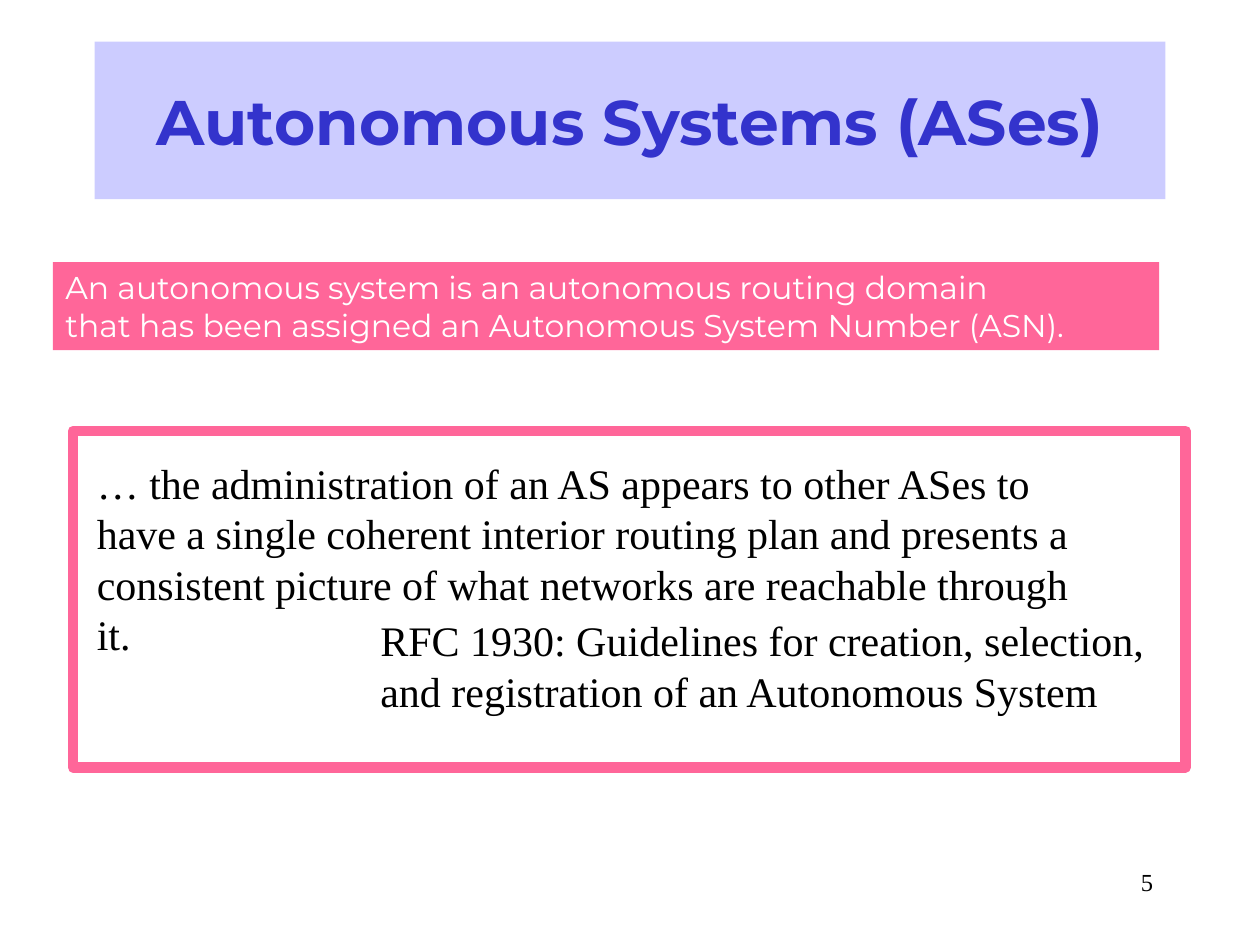
from pptx import Presentation
from pptx import util as u
from pptx.dml.color import RGBColor
from pptx.enum import shapes, text

COLORS = {
    "title_fill": "CCCCFF",
    "title_text": "3333CC",
    "accent": "FF6699",
    "white": "FFFFFF",
    "black": "000000",
}
SANS, SERIF = "Montserrat", "Times New Roman"


def color(name):
    """Return the named colour."""
    return RGBColor.from_string(COLORS[name])


def place(shape, box):
    """Move a shape to a left, top, width, height box in inches."""
    shape.left, shape.top, shape.width, shape.height = map(u.Inches, box)


def fill(shape, name):
    """Give a shape a solid fill."""
    shape.fill.solid()
    shape.fill.fore_color.rgb = color(name)


def write(shape, lines, font=SERIF, size=24, ink="black", bold=False,
          align=text.PP_ALIGN.LEFT, anchor=text.MSO_ANCHOR.TOP, spacing=None):
    """Write one paragraph per line into a shape."""
    frame = shape.text_frame
    frame.word_wrap = True
    frame.auto_size = text.MSO_AUTO_SIZE.NONE
    frame.vertical_anchor = anchor
    frame.text = "\n".join(lines)
    for paragraph in frame.paragraphs:
        paragraph.alignment = align
        if spacing:
            paragraph.line_spacing = u.Pt(spacing)
        style = paragraph.runs[0].font
        style.name, style.size, style.bold = font, u.Pt(size), bold
        style.color.rgb = color(ink)


def add_text(parent, box, lines, **style):
    """Add a text box to a shape collection."""
    shape = parent.add_textbox(*map(u.Inches, box))
    write(shape, lines, **style)
    return shape


def add_title(slide, box):
    """Format the title placeholder as a filled banner."""
    title = slide.shapes.title
    place(title, box)
    fill(title, "title_fill")
    write(title, ["Autonomous Systems (ASes)"], font=SANS, size=36,
          ink="title_text", bold=True, align=text.PP_ALIGN.CENTER,
          anchor=text.MSO_ANCHOR.MIDDLE)


def add_definition(slide, box):
    """Add the definition on its accent band."""
    band = add_text(slide.shapes, box, [
        "An autonomous system is an autonomous routing domain",
        "that has been assigned an Autonomous System Number (ASN).",
    ], font=SANS, size=18, ink="white")
    fill(band, "accent")


def add_quote(slide, box):
    """Add the framed quotation and its source as a group."""
    left, top, width, height = box
    group = slide.shapes.add_group_shape().shapes
    frame = group.add_shape(shapes.MSO_SHAPE.RECTANGLE, *map(u.Inches, box))
    frame.shadow.inherit = False
    fill(frame, "white")
    frame.line.color.rgb = color("accent")
    frame.line.width = u.Pt(6)
    add_text(group, (left + 2.34, top + 1.41, width - 2.49, 0.9), [
        "RFC 1930: Guidelines for creation, selection,",
        "and registration of an Autonomous System",
    ], spacing=28.8)
    add_text(group, (left + 0.09, top + 0.16, width - 0.63, 1.3), [
        "… the administration of an AS appears to other ASes to",
        "have a single coherent interior routing plan and presents a",
        "consistent picture of what networks are reachable through it.",
    ], spacing=28.8)


def main():
    """Build and save the slide."""
    presentation = Presentation()
    presentation.slide_width = u.Inches(10)
    presentation.slide_height = u.Inches(7.5)
    slide = presentation.slides.add_slide(presentation.slide_layouts[5])
    add_text(slide.shapes, (7.17, 6.83, 2.08, 0.5), ["5"], size=14,
             align=text.PP_ALIGN.RIGHT)
    add_title(slide, (0.75, 0.33, 8.5, 1.25))
    add_definition(slide, (0.42, 2.08, 8.78, 0.7))
    add_quote(slide, (0.58, 3.42, 8.83, 2.67))
    presentation.save("out.pptx")


if __name__ == "__main__":
    main()
